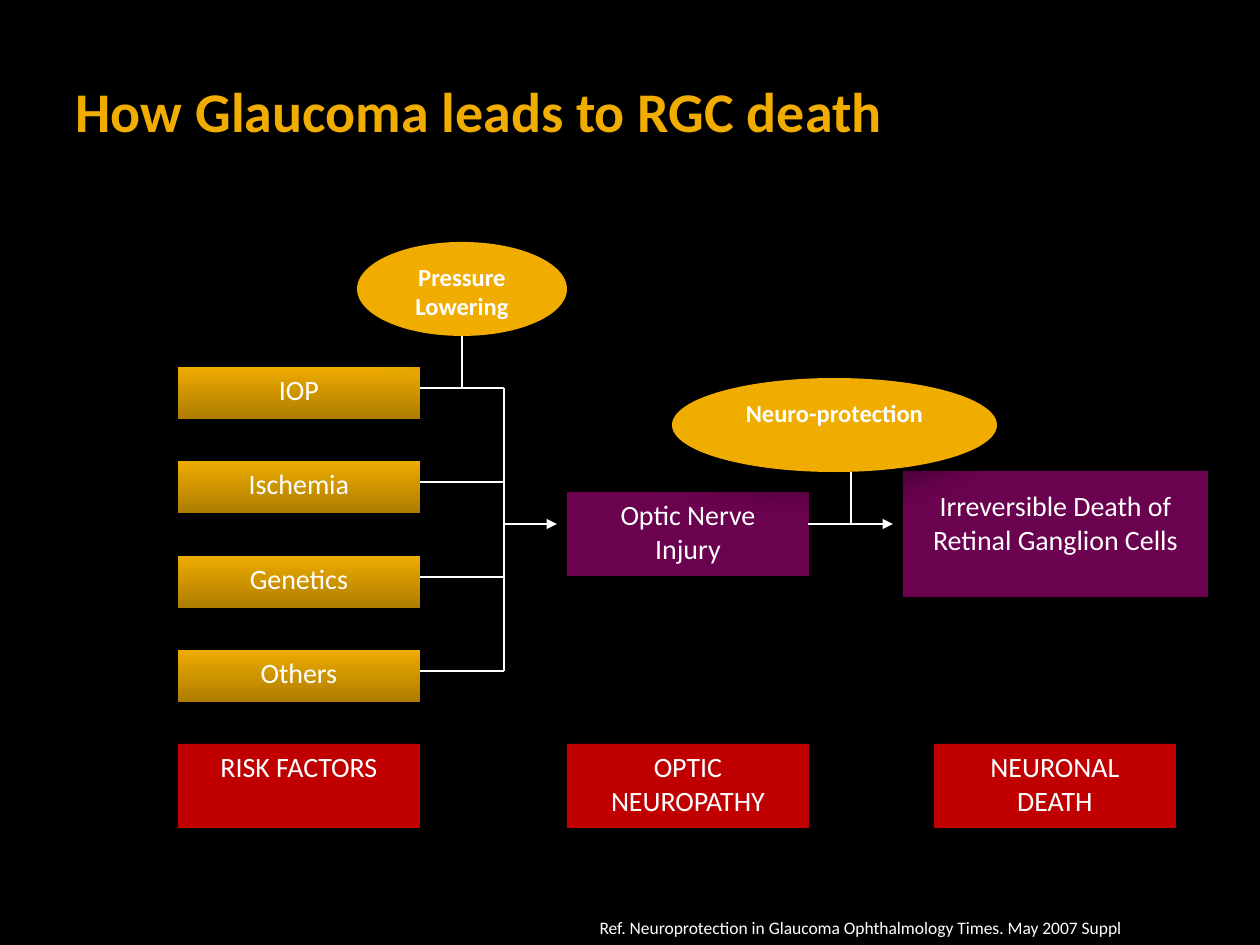
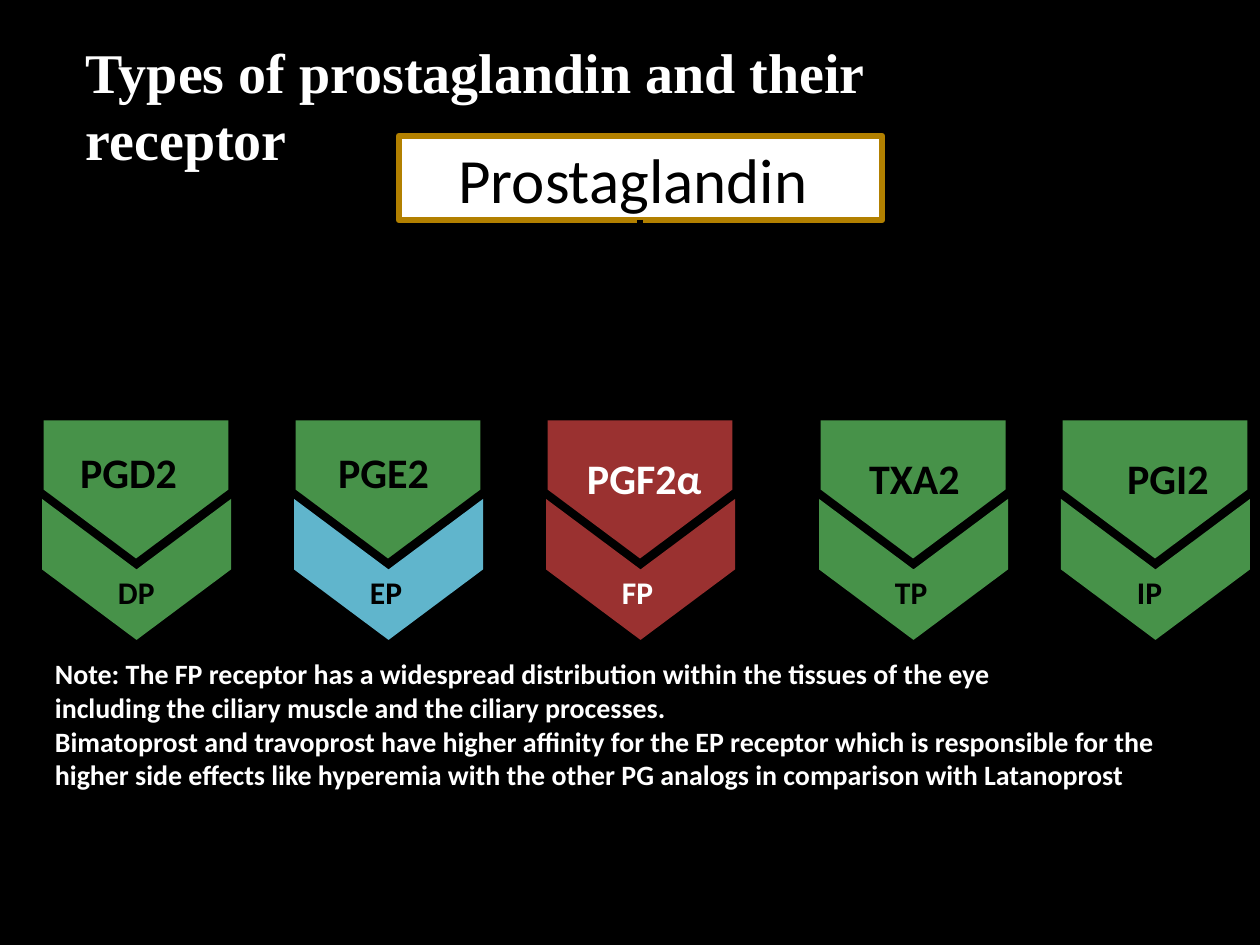
from dataclasses import dataclass

from lxml import etree
from pptx import Presentation
from pptx import util as u
from pptx.dml.color import RGBColor
from pptx.enum import shapes, text
from pptx.oxml import ns

PX = u.Inches(1) / 126
KIND = shapes.MSO_SHAPE
ALIGN = text.PP_ALIGN
ANCHOR = text.MSO_ANCHOR


@dataclass(frozen=True)
class Theme:
    black: str = "000000"
    white: str = "FFFFFF"
    amber: str = "F0AD00"
    amber_top: str = "EEAB00"
    amber_bottom: str = "AE7D00"
    amber_border: str = "B28000"
    red: str = "C00000"
    purple: str = "6A024F"
    green: str = "479249"
    blue: str = "60B5CC"
    brick: str = "9A3130"
    font: str = "Calibri"
    title_font: str = "Times New Roman"
    reference: int = 10
    small: int = 14
    body: int = 16
    receptor: int = 18
    molecule: int = 24
    title: int = 32
    headline: int = 36
    thin: float = 0.75
    thick: float = 3.8


theme = Theme()


def add_box(slide, kind, bounds, lines=(), size=theme.body, fill=None, color=theme.white,
            bold=False, align=ALIGN.CENTER, anchor=ANCHOR.TOP, wrap=True, insets=(13, 6, 13, 6)):
    """Add a preset shape, or a text box when kind is None; bounds and insets are px."""
    bounds = [u.Emu(round(value * PX)) for value in bounds]
    if kind is None:
        shape = slide.shapes.add_textbox(*bounds)
    else:
        shape = slide.shapes.add_shape(kind, *bounds)
        shape.shadow.inherit = False
        shape.line.fill.background()
        if fill:
            shape.fill.solid()
            shape.fill.fore_color.rgb = RGBColor.from_string(fill)
    frame = shape.text_frame
    frame.word_wrap = wrap
    frame.vertical_anchor = anchor
    frame.margin_left, frame.margin_top, frame.margin_right, frame.margin_bottom = [
        u.Emu(round(value * PX)) for value in insets]
    for index, line in enumerate(lines):
        paragraph = frame.add_paragraph() if index else frame.paragraphs[0]
        paragraph.text = line
        paragraph.alignment = align
        paragraph.font.name = theme.font
        paragraph.font.size = u.Pt(size)
        paragraph.font.bold = bold
        paragraph.font.color.rgb = RGBColor.from_string(color)
    return shape


def add_line(slide, x1, y1, x2, y2, color=theme.white, width=theme.thin, arrow=False):
    ends = [u.Emu(round(value * PX)) for value in (x1, y1, x2, y2)]
    line = slide.shapes.add_connector(shapes.MSO_CONNECTOR.STRAIGHT, *ends)
    line.line.color.rgb = RGBColor.from_string(color)
    line.line.width = u.Pt(width)
    if arrow:
        etree.SubElement(line.line._get_or_add_ln(), ns.qn("a:tailEnd"), type="triangle")
    etree.SubElement(line._element.spPr, ns.qn("a:effectLst"))


presentation = Presentation()
presentation.slide_width = u.Inches(10)
presentation.slide_height = u.Inches(7.5)
background = presentation.slide_master.background.fill
background.solid()
background.fore_color.rgb = RGBColor.from_string(theme.black)

# Slides and their titles
titles = [
    ("How Glaucoma leads to RGC death", (63, 21, 1029, 179), ANCHOR.MIDDLE, theme.font, theme.amber),
    ("Types of prostaglandin and their receptor", (73, 31, 975, 146), ANCHOR.TOP,
     theme.title_font, theme.white),
]
slides = []
for words, bounds, anchor, font, color in titles:
    slide = presentation.slides.add_slide(presentation.slide_layouts[5])
    title = slide.shapes.title
    title.left, title.top, title.width, title.height = [u.Emu(round(value * PX)) for value in bounds]
    title.text_frame.text = words
    title.text_frame.vertical_anchor = anchor
    title.text_frame.auto_size = text.MSO_AUTO_SIZE.NONE
    paragraph = title.text_frame.paragraphs[0]
    paragraph.alignment = ALIGN.LEFT
    paragraph.font.name = font
    paragraph.font.size = u.Pt(theme.title)
    paragraph.font.bold = True
    paragraph.font.color.rgb = RGBColor.from_string(color)
    slides.append(slide)
pathway, receptors = slides

# Slide 1: risk factors joined to one bus
add_box(pathway, None, (514, 911, 620, 34),
        ["Ref. Neuroprotection in Glaucoma Ophthalmology Times. May 2007 Suppl"],
        theme.reference, align=ALIGN.RIGHT)
BUS_X, FLOW_Y = 504, 524
for row, factor in enumerate(["IOP", "Ischemia", "Genetics", "Others"]):
    top = 367 + 189 * row // 2
    bar = add_box(pathway, KIND.RECTANGLE, (178, top, 242, 52), [factor])
    bar.fill.gradient()
    bar.fill.gradient_angle = 90
    for stop, color in zip(bar.fill.gradient_stops, (theme.amber_bottom, theme.amber_top)):
        stop.color.rgb = RGBColor.from_string(color)
    add_line(pathway, 420, top + 21, BUS_X, top + 21)
add_line(pathway, BUS_X, 388, BUS_X, 671)

# Stages of damage and the captions below them
stages = [
    ("RISK FACTORS", (178, 744, 242, 84), theme.red, 6),
    ("OPTIC NEUROPATHY", (567, 744, 242, 84), theme.red, 6),
    ("NEURONAL DEATH", (934, 744, 242, 84), theme.red, 6),
    ("Optic Nerve Injury", (567, 492, 242, 84), theme.purple, 6),
    ("Irreversible Death of Retinal Ganglion Cells", (903, 471, 305, 126), theme.purple, 18),
]
for words, bounds, fill, top_inset in stages:
    add_box(pathway, KIND.RECTANGLE, bounds, [words], fill=fill, insets=(23, top_inset, 23, 6))
add_line(pathway, BUS_X, FLOW_Y, 557, FLOW_Y, arrow=True)
add_line(pathway, 808, FLOW_Y, 893, FLOW_Y, arrow=True)

# Treatments, each blocking a step with a T-shaped line
treatments = [
    ("Pressure Lowering", (357, 242, 210, 94), 462, 388),
    ("Neuro-protection", (672, 378, 325, 94), 851, FLOW_Y),
]
for words, bounds, stem_x, block_y in treatments:
    oval = add_box(pathway, KIND.OVAL, bounds, [words], theme.small, theme.amber, bold=True)
    effects = oval._element.spPr.find(ns.qn("a:effectLst"))
    shadow = etree.SubElement(effects, ns.qn("a:outerShdw"), blurRad="150000", dist="250000",
                              dir="8460000", rotWithShape="0")
    shade = etree.SubElement(shadow, ns.qn("a:srgbClr"), val=theme.black)
    etree.SubElement(shade, ns.qn("a:alpha"), val="28000")
    add_line(pathway, stem_x, bounds[1] + bounds[3], stem_x, block_y)
    add_line(pathway, stem_x - 11, block_y, stem_x + 10, block_y)

# Slide 2: prostaglandin family
family = add_box(receptors, KIND.RECTANGLE, (399, 136, 483, 84), ["Prostaglandin"], theme.headline,
                 theme.white, theme.black, anchor=ANCHOR.MIDDLE, insets=(13, 6, 28, 6))
family.line.color.rgb = RGBColor.from_string(theme.amber_border)
family.line.width = u.Pt(theme.thick)
add_line(receptors, 640, 220, 640, 315, theme.black, theme.thick)

# Each molecule above its receptor: centre, label place, colours
columns = [
    ("PGD2", "DP", 136, (67, 441), theme.green, theme.green, theme.black),
    ("PGE2", "EP", 388, (325, 441), theme.green, theme.blue, theme.black),
    ("PGF2α", "FP", 640, (574, 447), theme.brick, theme.brick, theme.white),
    ("TXA2", "TP", 913, (856, 447), theme.green, theme.green, theme.black),
    ("PGI2", "IP", 1155, (1114, 447), theme.green, theme.green, theme.black),
]
for molecule, receptor, center, place, molecule_fill, receptor_fill, color in columns:
    plate = add_box(receptors, KIND.PENTAGON, (center - 69, 397, 138, 185), fill=molecule_fill)
    chevron = add_box(receptors, KIND.CHEVRON, (center - 70, 475, 141, 189), fill=receptor_fill)
    plate.rotation = chevron.rotation = 90
    add_box(receptors, None, (*place, 145, 63), [molecule], theme.molecule, color=color,
            bold=True, align=ALIGN.LEFT)
    add_box(receptors, None, (center - 31, 567, 63, 50), [receptor], theme.receptor, color=color,
            bold=True, align=ALIGN.LEFT)

add_box(receptors, None, (42, 651, 1187, 149), [
    "Note: The FP receptor has a widespread distribution within the tissues of the eye",
    "including the ciliary muscle and the ciliary processes.",
    "Bimatoprost and travoprost have higher affinity for the EP receptor which is responsible for "
    "the higher side effects like hyperemia with the other PG analogs in comparison with Latanoprost",
], bold=True, align=ALIGN.LEFT)

presentation.save("out.pptx")
